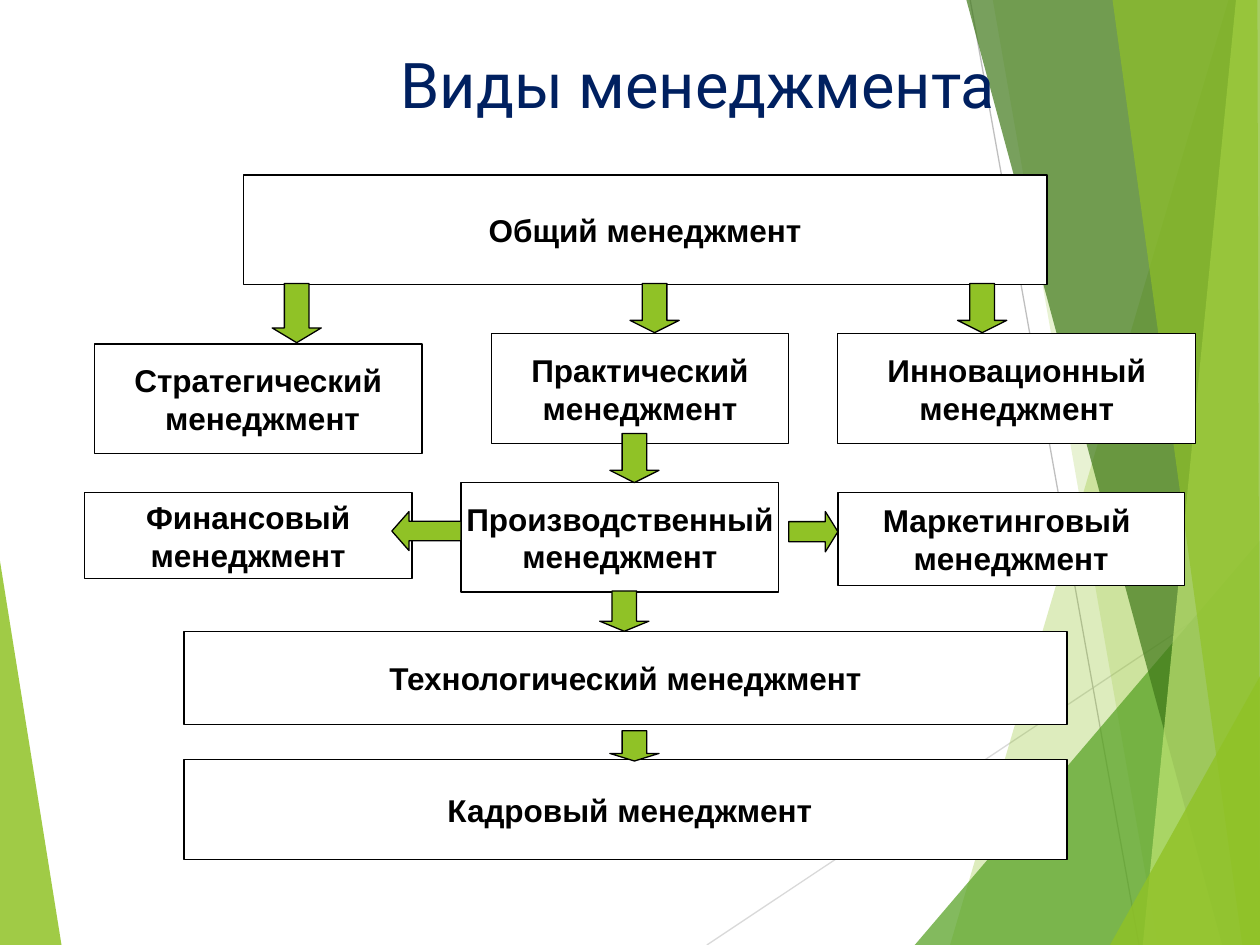
from pptx import Presentation
from pptx.dml.color import RGBColor
from pptx.enum.shapes import MSO_CONNECTOR, MSO_SHAPE
from pptx.enum.text import MSO_ANCHOR, PP_ALIGN
from pptx.oxml.ns import qn
from pptx.util import Inches, Pt
from lxml.etree import SubElement

TITLE = "Виды менеджмента"
LEFT_FACET = [("90C226", 85, [(-0.01, 4.39), (0.49, 7.51), (-0.01, 7.5)])]
RAYS = [("D9D9D9", (5.61, 7.5), (10.01, 4.57)),
        ("BFBFBF", (7.7, 0), (9.04, 7.5))]
RIGHT_FACETS = [
    ("90C226", 30, [(9.75, 0), (7.54, 7.5), (10.02, 7.51), (10.01, 0)]),
    ("90C226", 20, [(7.88, 0), (9.19, 7.5), (10.01, 7.5), (10.01, 0)]),
    ("54A021", 72, [(7.26, 7.5), (10, 4.29), (10.01, 7.5)]),
    ("3F7819", 70, [(7.67, 0), (9.7, 7.5), (10.01, 7.5), (10.01, 0)]),
    ("C0E474", 70, [(9.81, 0), (9.07, 7.5), (10.01, 7.5), (10, 0)]),
    ("90C226", 65, [(8.83, 0), (9.86, 7.5), (10, 7.5), (9.98, 0)]),
    ("90C226", 80, [(8.81, 7.5), (10.01, 5.35), (10.01, 7.5)]),
]
BOXES = [
    (1.93, 1.39, 6.38, 0.87, ["Общий менеджмент"]),
    (0.75, 2.73, 2.6, 0.87, ["Стратегический", " менеджмент"]),
    (6.65, 2.65, 2.84, 0.87, ["Инновационный", "менеджмент"]),
    (0.67, 3.91, 2.6, 0.68, ["Финансовый", "менеджмент"]),
    (6.65, 3.91, 2.75, 0.74, ["Маркетинговый ", "менеджмент"]),
    (1.46, 6.03, 7.01, 0.79, [" Кадровый менеджмент"]),
    (1.46, 5.01, 7.01, 0.74, [" Технологический менеджмент "]),
    (3.9, 2.65, 2.36, 0.87, ["Практический", "менеджмент"]),
    (3.66, 3.83, 2.52, 0.87, ["Производственный", "менеджмент"]),
]
DOWN, LEFT, RIGHT = MSO_SHAPE.DOWN_ARROW, MSO_SHAPE.LEFT_ARROW, MSO_SHAPE.RIGHT_ARROW
ARROWS = [
    (DOWN, 5, 2.25, 0.39, 0.39, 0.25),
    (DOWN, 2.16, 2.25, 0.39, 0.47, 0.3),
    (DOWN, 7.6, 2.25, 0.39, 0.39, 0.25),
    (DOWN, 4.84, 3.44, 0.39, 0.39, 0.25),
    (DOWN, 4.76, 4.69, 0.39, 0.32, 0.25),
    (DOWN, 4.84, 5.8, 0.39, 0.24, 0.25),
    (LEFT, 3.11, 4.06, 0.55, 0.31, 0.44),
    (RIGHT, 6.26, 4.06, 0.39, 0.32, 0.31),
]


def rgb(code):
    """Turn a hex string into a colour."""
    return RGBColor.from_string(code)


def paint(sp, fill):
    """Fill a shape and drop its shadow."""
    sp.shadow.inherit = False
    sp.fill.solid()
    sp.fill.fore_color.rgb = rgb(fill)


def write(p, text, size, font, color, bold):
    """Add one formatted run."""
    r = p.add_run()
    r.text = text
    r.font.size, r.font.name, r.font.bold = Pt(size), font, bold
    r.font.color.rgb = rgb(color)


def add_facet(s, color, alpha, points):
    """Draw a translucent polygon."""
    start, *rest = [(Inches(x), Inches(y)) for x, y in points]
    builder = s.shapes.build_freeform(*start)
    builder.add_line_segments(rest, close=True)
    sp = builder.convert_to_shape()
    paint(sp, color)
    sp.line.fill.background()
    clr = sp._element.spPr.find(qn("a:solidFill"))[0]
    SubElement(clr, qn("a:alpha")).set("val", str(alpha * 1000))


def add_ray(s, color, start, end):
    """Draw a thin background line."""
    ray = s.shapes.add_connector(MSO_CONNECTOR.STRAIGHT, *map(Inches, start + end))
    ray.line.color.rgb = rgb(color)
    ray.line.width = Pt(0.75)
    SubElement(ray._element.spPr, qn("a:effectLst"))


def add_block(s, kind, place, fill):
    """Draw a filled preset shape with a thin black outline."""
    sp = s.shapes.add_shape(kind, *map(Inches, place))
    paint(sp, fill)
    sp.line.color.rgb = rgb("000000")
    sp.line.width = Pt(0.75)
    return sp


def add_box(s, place, lines):
    """Draw a labelled box, one paragraph per line."""
    tf = add_block(s, MSO_SHAPE.RECTANGLE, place, "FFFFFF").text_frame
    tf.word_wrap = False
    tf.vertical_anchor = MSO_ANCHOR.MIDDLE
    for i, line in enumerate(lines):
        p = tf.add_paragraph() if i else tf.paragraphs[0]
        p.alignment = PP_ALIGN.CENTER
        write(p, line, 18, "Arial", "000000", True)


def set_title(s):
    """Place the title in front of the facets."""
    sp = s.shapes.title
    sp.left, sp.top, sp.width, sp.height = map(Inches, (1.5, 0.27, 8.5, 1.01))
    tf = sp.text_frame
    tf.vertical_anchor = MSO_ANCHOR.TOP
    tf.margin_left, tf.margin_top = Inches(1.68), Inches(0.09)
    p = tf.paragraphs[0]
    p.alignment = PP_ALIGN.LEFT
    write(p, TITLE, 36, "Roboto", "002060", False)
    sp._element.getparent().append(sp._element)


def main():
    """Build the slide."""
    prs = Presentation()
    prs.slide_width, prs.slide_height = Inches(10), Inches(7.5)
    s = prs.slides.add_slide(prs.slide_layouts[5])
    for facet in LEFT_FACET:
        add_facet(s, *facet)
    for ray in RAYS:
        add_ray(s, *ray)
    for facet in RIGHT_FACETS:
        add_facet(s, *facet)
    set_title(s)
    for *place, lines in BOXES:
        add_box(s, place, lines)
    for kind, *place, head in ARROWS:
        sp = add_block(s, kind, place, "90C226")
        sp.adjustments[0], sp.adjustments[1] = 0.5, head
    prs.save("out.pptx")


if __name__ == "__main__":
    main()
